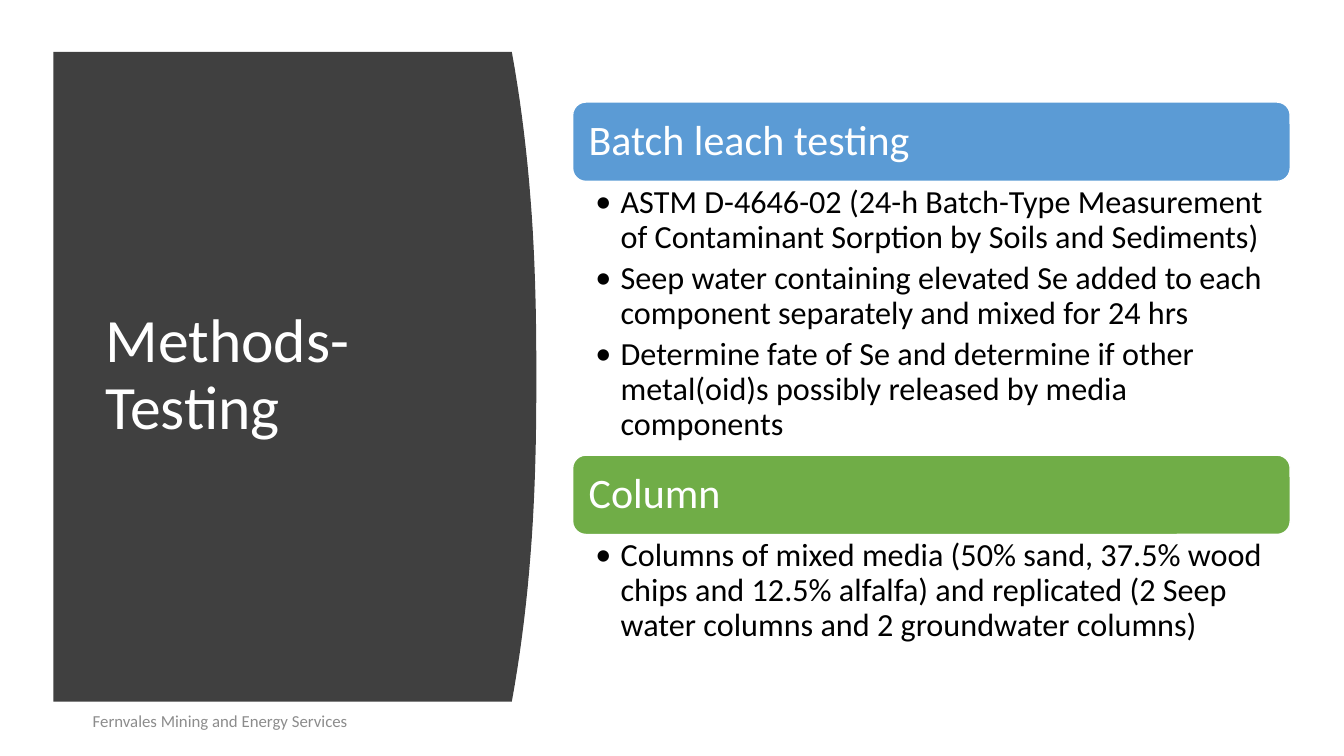
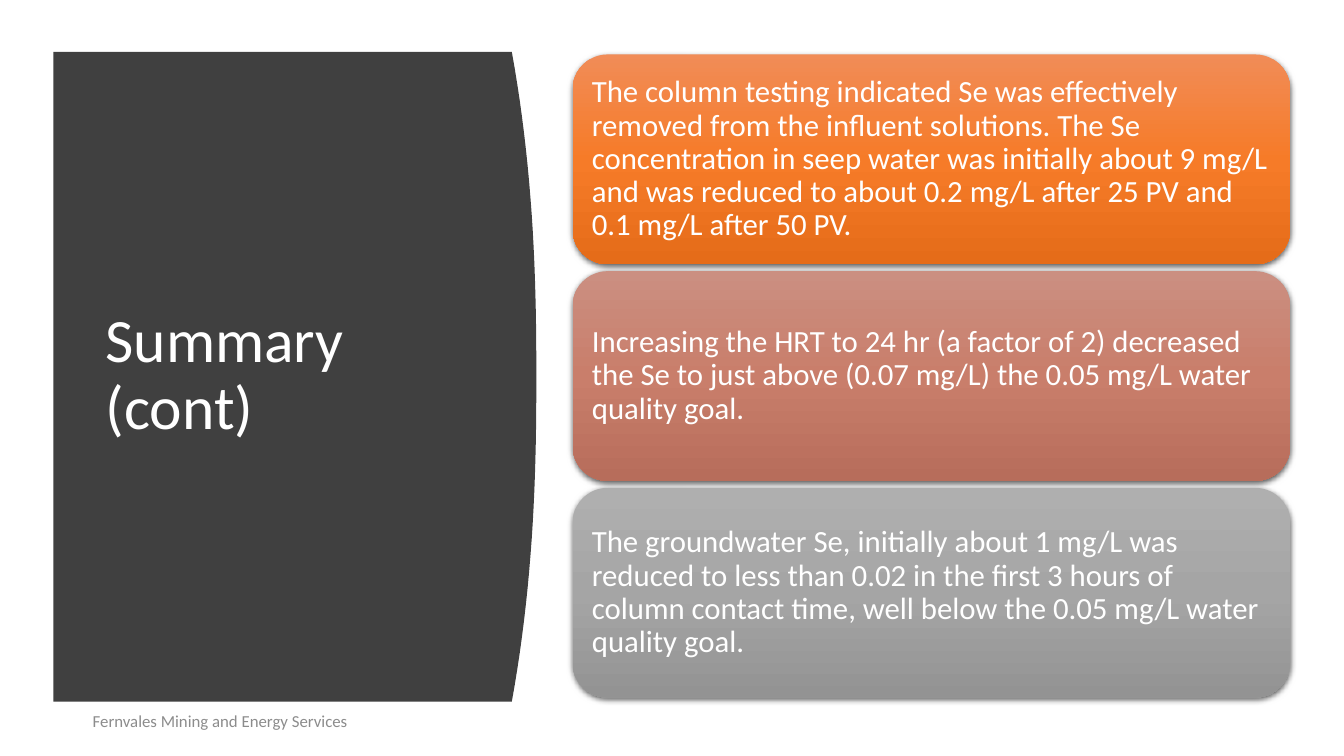
from lxml import etree
from pptx import Presentation
from pptx.dml.color import RGBColor
from pptx.enum.shapes import MSO_SHAPE
from pptx.enum.text import MSO_ANCHOR, MSO_AUTO_SIZE, PP_ALIGN
from pptx.oxml import parse_xml
from pptx.oxml.ns import nsdecls, qn
from pptx.util import Pt

ROUND = MSO_SHAPE.ROUNDED_RECTANGLE
MIDDLE, TOP = MSO_ANCHOR.MIDDLE, MSO_ANCHOR.TOP
LEFT = PP_ALIGN.LEFT
NO_FIT = MSO_AUTO_SIZE.NONE

FONT = "Calibri"
WHITE = RGBColor(0xFF, 0xFF, 0xFF)
BLACK = RGBColor(0x00, 0x00, 0x00)
DARK = RGBColor(0x40, 0x40, 0x40)
GRAY = RGBColor(0x8C, 0x8C, 0x8C)
BLUE = RGBColor(0x5B, 0x9B, 0xD5)
GREEN = RGBColor(0x70, 0xAD, 0x47)
ORANGE_FADE = [RGBColor(0xF1, 0x8C, 0x57), RGBColor(0xF6, 0x7B, 0x28),
               RGBColor(0xE5, 0x6C, 0x19)]
RUST_FADE = [RGBColor(0xCB, 0x8F, 0x81), RGBColor(0xC9, 0x7E, 0x6B),
             RGBColor(0xB7, 0x6D, 0x5B)]
GRAY_FADE = [RGBColor(0xAF, 0xAF, 0xAF), RGBColor(0xA5, 0xA5, 0xA5),
             RGBColor(0x93, 0x93, 0x93)]

FOOTER = "Fernvales Mining and Energy Services"

# heading, colour, height of the list below, list items
METHODS = [
    ("Batch leach testing", BLUE, 195.5, [
        "ASTM D-4646-02 (24-h Batch-Type Measurement of Contaminant "
        "Sorption by Soils and Sediments)",
        "Seep water containing elevated Se added to each component "
        "separately and mixed for 24 hrs",
        "Determine fate of Se and determine if other metal(oid)s possibly "
        "released by media components",
    ]),
    ("Column", GREEN, 82.8, [
        "Columns of mixed media (50% sand, 37.5% wood chips and 12.5% "
        "alfalfa) and replicated (2 Seep water columns and 2 groundwater "
        "columns)",
    ]),
]
FINDINGS = [
    ("The column testing indicated Se was effectively removed from the "
     "influent solutions. The Se concentration in seep water was initially "
     "about 9 mg/L and was reduced to about 0.2 mg/L after 25 PV and "
     "0.1 mg/L after 50 PV.", ORANGE_FADE),
    ("Increasing the HRT to 24 hr (a factor of 2) decreased the Se to just "
     "above (0.07 mg/L) the 0.05 mg/L water quality goal.", RUST_FADE),
    ("The groundwater Se, initially about 1 mg/L was reduced to less than "
     "0.02 in the first 3 hours of column contact time, well below the "
     "0.05 mg/L water quality goal.", GRAY_FADE),
]

# Left panel: straight sides, right edge bulging from EDGE by BULGE
PANEL_X, PANEL_Y, PANEL_H = 38.2, 37.1, 464
EDGE, BULGE, STEPS = 365.6, 17.5, 40
# Right column
COL_X, COL_W = 409, 512.6
HEAD_Y, HEAD_H = 72.9, 56.7
CARD_Y, CARD_H, CARD_GAP = 38.9, 149.8, 5


def write(shape, lines, size, color, anchor=MIDDLE, side=7.2, edge=3.6,
          leading=0.9, after=0):
    frame = shape.text_frame
    frame.text = "\n".join(lines)
    frame.word_wrap = True
    frame.auto_size = NO_FIT
    frame.vertical_anchor = anchor
    frame.margin_left = frame.margin_right = Pt(side)
    frame.margin_top = frame.margin_bottom = Pt(edge)
    for para in frame.paragraphs:
        para.alignment = LEFT
        para.line_spacing = leading
        para.space_after = Pt(after)
        font = para.runs[0].font
        font.name, font.size, font.color.rgb = FONT, Pt(size), color


def add_text(slide, x, y, w, h, *args, **style):
    box = slide.shapes.add_textbox(Pt(x), Pt(y), Pt(w), Pt(h))
    write(box, *args, **style)
    return box


def add_round(slide, y, h):
    box = slide.shapes.add_shape(ROUND, Pt(COL_X), Pt(y), Pt(COL_W), Pt(h))
    box.shadow.inherit = False
    return box


def add_bullets(box, indent):
    for para in box.text_frame.paragraphs:
        props = para._p.get_or_add_pPr()
        props.set("marL", str(Pt(indent)))
        props.set("indent", str(-Pt(indent)))
        etree.SubElement(props, qn("a:buFont"), typeface=FONT)
        etree.SubElement(props, qn("a:buChar"), char="•")


def fade(shape, colors):
    """Fill from top to bottom through evenly spaced colours."""
    step = 100000 // (len(colors) - 1)
    stops = "".join(
        f'<a:gs pos="{i * step}"><a:srgbClr val="{color}"/></a:gs>'
        for i, color in enumerate(colors))
    shape._element.spPr.insert(2, parse_xml(
        f'<a:gradFill {nsdecls("a")}><a:gsLst>{stops}</a:gsLst>'
        '<a:lin ang="5400000" scaled="0"/></a:gradFill>'))


def add_shadow(shape):
    effects = shape._element.spPr.find(qn("a:effectLst"))
    effects.append(parse_xml(
        f'<a:outerShdw {nsdecls("a")} blurRad="{Pt(4.5)}" dist="{Pt(1.5)}" '
        'dir="5400000" algn="ctr" rotWithShape="0"><a:srgbClr val="000000">'
        '<a:alpha val="63000"/></a:srgbClr></a:outerShdw>'))


def add_panel(slide):
    curve = []
    for i in range(STEPS + 1):
        off = abs(2 * i / STEPS - 1)
        curve.append((Pt(EDGE + BULGE * (1 - off ** 2.4)),
                      Pt(PANEL_Y + PANEL_H * i / STEPS)))
    build = slide.shapes.build_freeform(Pt(PANEL_X), Pt(PANEL_Y))
    build.add_line_segments(curve + [(Pt(PANEL_X), Pt(PANEL_Y + PANEL_H))])
    panel = build.convert_to_shape()
    panel.shadow.inherit = False
    panel.fill.solid()
    panel.fill.fore_color.rgb = DARK
    panel.line.fill.background()
    slide.shapes._spTree.insert(2, panel._element)  # behind the title


def add_slide(deck, text):
    slide = deck.slides.add_slide(deck.slide_layouts.get_by_name("Title Only"))
    add_panel(slide)
    title = slide.shapes.title
    title.left, title.top = Pt(68.2), Pt(80)
    title.width, title.height = Pt(269.3), Pt(377.3)
    write(title, [text], 44, WHITE)
    add_text(slide, 59.2, 500.4, 324, 28.8, [FOOTER], 12, GRAY,
             leading=1, after=6)
    return slide


def add_methods(slide):
    y = HEAD_Y
    for name, color, height, items in METHODS:
        head = add_round(slide, y, HEAD_H)
        head.fill.solid()
        head.fill.fore_color.rgb = color
        head.line.color.rgb = WHITE
        head.line.width = Pt(1)
        write(head, [name], 30, WHITE, side=8.7)
        y += HEAD_H
        body = add_text(slide, COL_X, y, COL_W, height, items, 23, BLACK,
                        anchor=TOP, side=16.3, edge=3.2, after=4.6)
        add_bullets(body, 18)
        y += height


def add_findings(slide):
    for i, (text, colors) in enumerate(FINDINGS):
        card = add_round(slide, CARD_Y + i * (CARD_H + CARD_GAP), CARD_H)
        fade(card, colors)
        card.line.fill.background()
        add_shadow(card)
        write(card, [text], 22, WHITE, side=6.5)


def main():
    deck = Presentation()
    deck.slide_width, deck.slide_height = Pt(960), Pt(540)
    add_methods(add_slide(deck, "Methods- Testing"))
    add_findings(add_slide(deck, "Summary (cont)"))
    deck.save("out.pptx")


if __name__ == "__main__":
    main()
